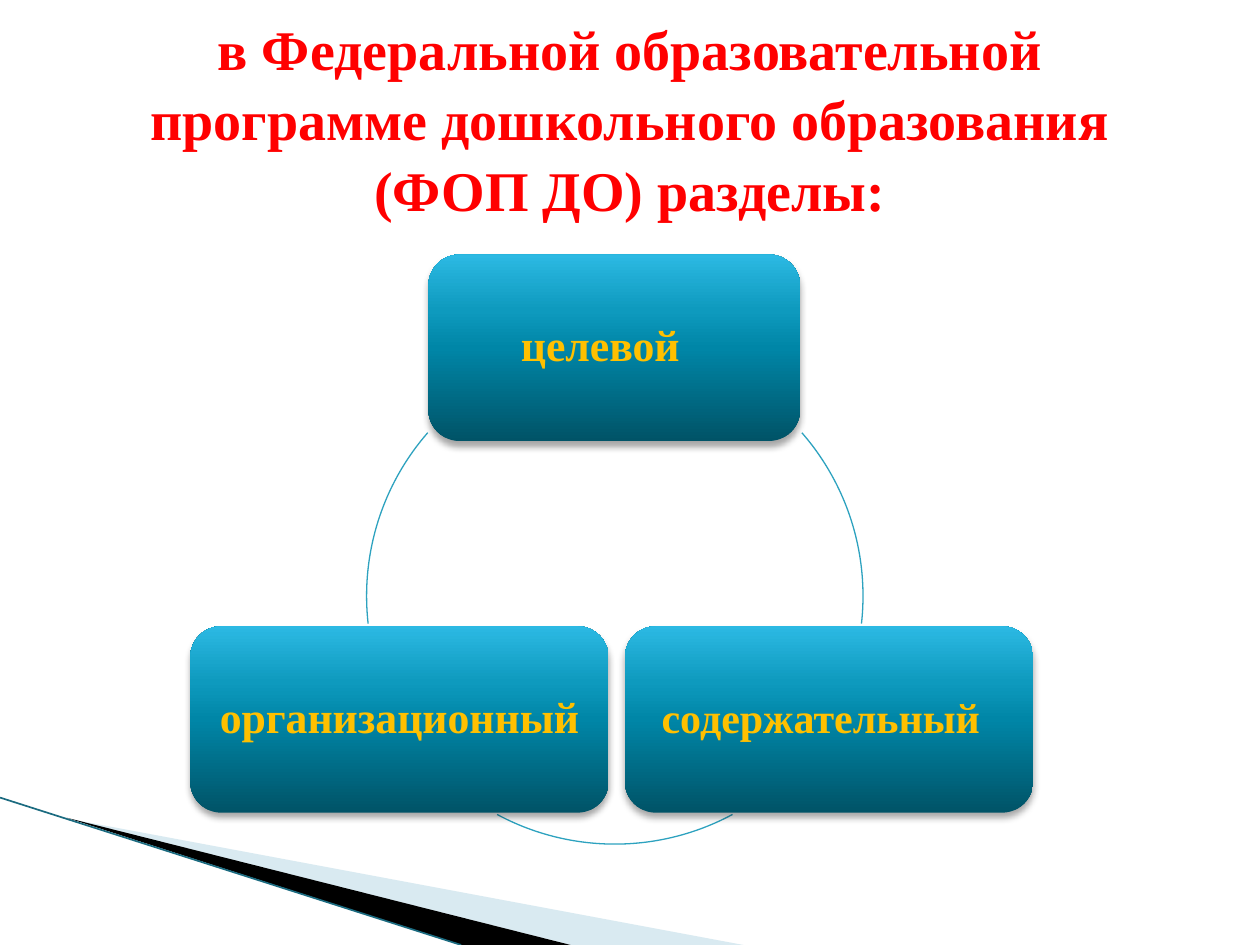
from lxml import etree
from pptx import Presentation
from pptx.dml.color import RGBColor
from pptx.enum.shapes import MSO_CONNECTOR, MSO_SHAPE
from pptx.enum.text import MSO_ANCHOR, PP_ALIGN
from pptx.oxml import parse_xml
from pptx.oxml.ns import nsdecls, qn
from pptx.util import Inches, Pt


def color(value):
    return RGBColor.from_string(value)


class SlideBuilder:
    FONT = "Times New Roman"
    TITLE, LABEL, ARC, EDGE = "FF0000", "FFC000", "2DA2BF", "1B6B80"
    GRADIENT = [(0, "005367"), (50, "0086A7"), (70, "0E9ABE"), (100, "2CB9E3")]

    def __init__(self, slide):
        self.s = slide

    def set_text(self, shape, text, size, value, spacing):
        tf = shape.text_frame
        tf.word_wrap = True
        tf.vertical_anchor = MSO_ANCHOR.MIDDLE
        tf.text = text
        p = tf.paragraphs[0]
        p.alignment = PP_ALIGN.CENTER
        p.line_spacing = spacing
        font = p.runs[0].font
        font.name, font.size, font.bold = self.FONT, Pt(size), True
        font.color.rgb = color(value)

    def title(self, text, left, top, width, height):
        sp = self.s.shapes.title
        sp.left, sp.top = Inches(left), Inches(top)
        sp.width, sp.height = Inches(width), Inches(height)
        self.set_text(sp, text, 32, self.TITLE, 1.05)

    def wedge(self, points, value, opacity=100):
        start, *rest = [(Inches(x), Inches(y)) for x, y in points]
        builder = self.s.shapes.build_freeform(*start)
        builder.add_line_segments(rest)
        sp = builder.convert_to_shape()
        sp.shadow.inherit = False
        sp.fill.solid()
        sp.fill.fore_color.rgb = color(value)
        sp.line.fill.background()
        if opacity < 100:
            clr = sp._element.spPr.find(".//" + qn("a:srgbClr"))
            etree.SubElement(clr, qn("a:alpha"), val=str(opacity * 1000))

    def line(self, x1, y1, x2, y2):
        c = self.s.shapes.add_connector(
            MSO_CONNECTOR.STRAIGHT, Inches(x1), Inches(y1), Inches(x2), Inches(y2))
        c.line.color.rgb = color(self.EDGE)
        c.line.width = Pt(0.95)
        etree.SubElement(c._element.spPr, qn("a:effectLst"))

    def arc(self, cx, cy, radius, start, end):
        sp = self.s.shapes.add_shape(
            MSO_SHAPE.ARC, Inches(cx - radius), Inches(cy - radius),
            Inches(2 * radius), Inches(2 * radius))
        # Arc adjustments count 100000 units of 1/60000 degree
        sp.adjustments[0], sp.adjustments[1] = start * 0.6, end * 0.6
        sp.shadow.inherit = False
        sp.fill.background()
        sp.line.color.rgb = color(self.ARC)
        sp.line.width = Pt(0.75)

    def card(self, text, left, top, width, height, size, right_inset):
        sp = self.s.shapes.add_shape(
            MSO_SHAPE.ROUNDED_RECTANGLE, Inches(left), Inches(top),
            Inches(width), Inches(height))
        sp.line.fill.background()
        # Four-stop gradient, dark at the bottom
        stops = "".join(f'<a:gs pos="{pos * 1000}"><a:srgbClr val="{value}"/></a:gs>'
                        for pos, value in self.GRADIENT)
        sp._element.spPr.find(qn("a:prstGeom")).addnext(parse_xml(
            f'<a:gradFill {nsdecls("a")} rotWithShape="1"><a:gsLst>{stops}</a:gsLst>'
            '<a:lin ang="16200000" scaled="0"/></a:gradFill>'))
        # Soft shadow below
        sp._element.spPr.append(parse_xml(
            f'<a:effectLst {nsdecls("a")}><a:outerShdw blurRad="{Pt(4)}" '
            f'dist="{Pt(3)}" dir="5400000" rotWithShape="0"><a:srgbClr val="000000">'
            '<a:alpha val="35000"/></a:srgbClr></a:outerShdw></a:effectLst>'))
        tf = sp.text_frame
        tf.margin_left = tf.margin_top = tf.margin_bottom = Inches(0.1)
        tf.margin_right = Inches(right_inset)
        self.set_text(sp, text, size, self.LABEL, 0.9)


def main():
    prs = Presentation()
    prs.slide_width, prs.slide_height = Inches(10), Inches(7.5)
    b = SlideBuilder(prs.slides.add_slide(prs.slide_layouts[5]))

    # Corner decoration
    b.wedge([(0.55, 6.5), (5.9, 7.5), (4.53, 7.5)], "A0CBDC", 40)
    b.wedge([(0.53, 6.49), (4.53, 7.5), (3.66, 7.5)], "000000")
    b.line(0, 6.33, 3.66, 7.5)

    # Title
    b.title("в Федеральной образовательной программе дошкольного образования "
            "(ФОП ДО) разделы:", 0.5, 0.3, 9, 1.25)

    # Cycle: arcs between the cards
    for start, end in [(318.9, 6.4), (61.7, 118.3), (173.6, 221.1)]:
        b.arc(4.88, 4.73, 1.97, start, end)

    # Cycle: cards
    for text, left, top, width, size, right_inset in [
            ("целевой", 3.4, 2.02, 2.95, 25, 0.32),
            ("содержательный", 4.96, 4.97, 3.24, 24, 0.23),
            ("организационный", 1.51, 4.97, 3.32, 25, 0.1)]:
        b.card(text, left, top, width, 1.48, size, right_inset)

    prs.save("out.pptx")


if __name__ == "__main__":
    main()
